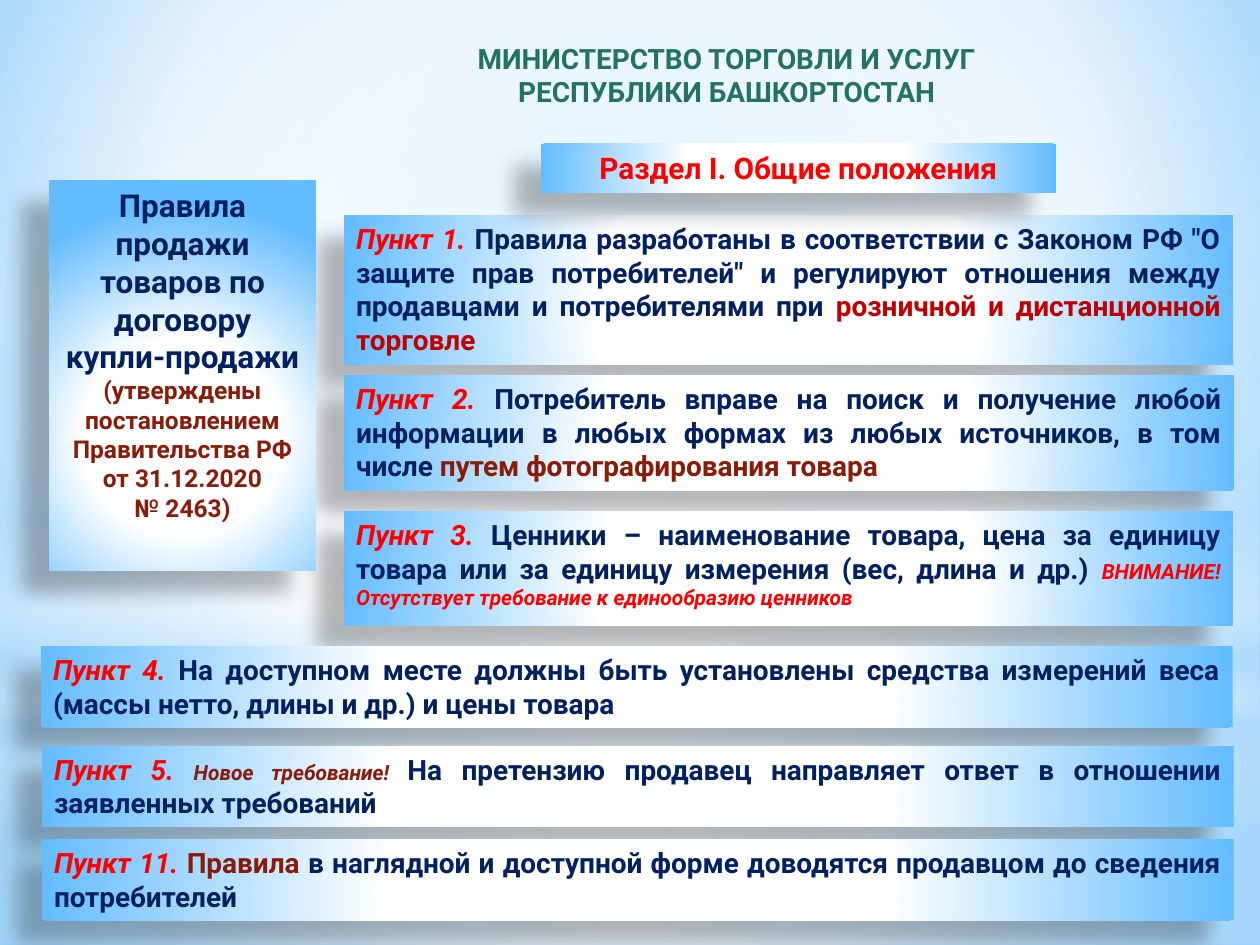
from dataclasses import dataclass
from typing import Optional

from lxml import etree
from pptx import Presentation
from pptx.dml.color import RGBColor
from pptx.enum.shapes import MSO_SHAPE
from pptx.enum.text import MSO_ANCHOR, PP_ALIGN
from pptx.oxml.ns import nsdecls, qn
from pptx.util import Cm, Pt

RECT, OVAL = MSO_SHAPE.RECTANGLE, MSO_SHAPE.OVAL
CENTER, JUSTIFY = PP_ALIGN.CENTER, PP_ALIGN.JUSTIFY
TOP = MSO_ANCHOR.TOP
FONT = "Roboto"
COLORS = {
    "white": "FFFFFF",
    "black": "000000",
    "sky": "9ED5FF",
    "azure": "5BB9FF",
    "panel": "63BCFF",
    "haze": "B4DCFA",
    "red": "FF0000",
    "crimson": "C00000",
    "brown": "891B09",
    "navy": "002060",
    "green": "23735D",
}


@dataclass(frozen=True)
class Gradient:
    stops: tuple[tuple[int, str, int], ...]
    focus: Optional[tuple[int, int, int, int]] = None
    angle: int = 0


@dataclass(frozen=True)
class Box:
    left: float
    top: float
    width: float
    height: float


@dataclass(frozen=True)
class Span:
    text: str
    color: str = "navy"
    italic: bool = False
    size: Optional[int] = None


@dataclass(frozen=True)
class Para:
    spans: tuple[Span, ...]
    size: int = 16
    align: PP_ALIGN = CENTER


CENTRE_FOCUS = (50, 50, 50, 50)
BACKDROP = Gradient(
    ((0, "sky", 100), (60, "white", 100), (100, "azure", 100)), (20, 10, 20, 60)
)
PANEL = Gradient(
    ((0, "white", 100), (42, "white", 100), (100, "panel", 100)), (24, 44, 24, 12)
)
LAYERS = (
    (RECT, Box(0, 14.17, 25.4, 4.88),
     Gradient(((0, "white", 91), (37, "white", 76), (100, "haze", 79)), CENTRE_FOCUS)),
    (RECT, Box(0, 0, 25.4, 14.17),
     Gradient(((0, "white", 89), (48, "white", 62), (100, "haze", 79)), CENTRE_FOCUS)),
    (RECT, Box(0, 10.46, 25.4, 6.35),
     Gradient(((0, "white", 0), (29, "white", 30), (45, "haze", 40),
               (55, "white", 26), (65, "haze", 60), (100, "white", 0)), angle=90)),
    (OVAL, Box(0, 4.45, 25.4, 14.17),
     Gradient(((0, "white", 100), (56, "white", 0)), CENTRE_FOCUS)),
)

MINISTRY = (
    Para((Span("МИНИСТЕРСТВО ТОРГОВЛИ И УСЛУГ", "green"),)),
    Para((Span("РЕСПУБЛИКИ БАШКОРТОСТАН", "green"),)),
)
RULES = (
    Para((Span("Правила продажи товаров по договору купли-продажи"),), 18),
    Para((Span("(утверждены постановлением Правительства РФ от 31.12.2020", "brown"),), 14),
    Para((Span("№ 2463)", "brown"),), 14),
)
SECTION = (Para((Span("Раздел I. Общие положения", "red"),), 17),)
CLAUSES = (
    (1, Box(6.93, 4.34, 17.93, 3), (
        Span("Правила разработаны в соответствии с Законом РФ \"О защите прав "
             "потребителей\" и регулируют отношения между продавцами и "
             "потребителями при "),
        Span("розничной и дистанционной торговле", "crimson"),
    )),
    (2, Box(6.93, 7.57, 17.95, 2.31), (
        Span("Потребитель вправе на поиск и получение любой информации в любых "
             "формах из любых источников, в том числе "),
        Span("путем фотографирования товара", "brown"),
    )),
    (3, Box(6.93, 10.31, 17.93, 2.31), (
        Span("Ценники – наименование товара, цена за единицу товара или за "
             "единицу измерения (вес, длина и др.) "),
        Span("ВНИМАНИЕ! Отсутствует требование к единообразию ценников",
             "red", True, 12),
    )),
    (4, Box(0.82, 13.03, 24.03, 1.63), (
        Span("На доступном месте должны быть установлены средства измерений "
             "веса (массы нетто, длины и др.) и цены товара"),
    )),
    (5, Box(0.84, 15.04, 24.03, 1.63), (
        Span("Новое требование! ", "brown", True, 12),
        Span("На претензию продавец направляет ответ в отношении заявленных требований"),
    )),
    (11, Box(0.84, 16.92, 24.03, 1.63), (
        Span("Правила ", "brown"),
        Span("в наглядной и доступной форме доводятся продавцом до сведения потребителей"),
    )),
)


def paint(fill, element, gradient: Gradient) -> None:
    fill.gradient()
    old = next(element.iter(qn("a:gradFill")))
    stops = "".join(
        f'<a:gs pos="{pos * 1000}"><a:srgbClr val="{COLORS[color]}">'
        f'<a:alpha val="{alpha * 1000}"/></a:srgbClr></a:gs>'
        for pos, color, alpha in gradient.stops
    )
    if gradient.focus:
        sides = " ".join(
            f'{side}="{value * 1000}"' for side, value in zip("ltrb", gradient.focus)
        )
        shade = f'<a:path path="circle"><a:fillToRect {sides}/></a:path>'
    else:
        shade = f'<a:lin ang="{gradient.angle * 60000}" scaled="0"/>'
    new = etree.fromstring(
        f'<a:gradFill {nsdecls("a")} rotWithShape="1">'
        f"<a:gsLst>{stops}</a:gsLst>{shade}</a:gradFill>"
    )
    old.getparent().replace(old, new)


def place(box: Box) -> tuple[Cm, Cm, Cm, Cm]:
    return Cm(box.left), Cm(box.top), Cm(box.width), Cm(box.height)


def add_filled(slide, kind: MSO_SHAPE, box: Box, gradient: Gradient):
    sp = slide.shapes.add_shape(kind, *place(box))
    paint(sp.fill, sp.element, gradient)
    sp.line.fill.background()
    sp.shadow.inherit = False
    return sp


def write(sp, paras: tuple[Para, ...]) -> None:
    tf = sp.text_frame
    tf.word_wrap = True
    tf.vertical_anchor = TOP
    for i, para in enumerate(paras):
        p = tf.add_paragraph() if i else tf.paragraphs[0]
        p.alignment = para.align
        p.font.name = FONT
        p.font.bold = True
        p.font.size = Pt(para.size)
        for span in para.spans:
            r = p.add_run()
            r.text = span.text
            r.font.color.rgb = RGBColor.from_string(COLORS[span.color])
            if span.italic:
                r.font.italic = True
            if span.size:
                r.font.size = Pt(span.size)


def add_panel(slide, box: Box, paras: tuple[Para, ...]) -> None:
    sp = add_filled(slide, RECT, box, PANEL)
    effects = next(sp.element.iter(qn("a:effectLst")))
    shadow = etree.SubElement(
        effects, qn("a:outerShdw"), blurRad=str(Pt(11.8)), dist=str(Pt(19.7)),
        dir=str(141 * 60000), algn="ctr", rotWithShape="0",
    )
    color = etree.SubElement(shadow, qn("a:srgbClr"), val=COLORS["black"])
    etree.SubElement(color, qn("a:alpha"), val="28000")
    write(sp, paras)


def main() -> None:
    prs = Presentation()
    prs.slide_width, prs.slide_height = Cm(25.4), Cm(19.05)
    s = prs.slides.add_slide(prs.slide_layouts[6])
    paint(s.background.fill, s.element, BACKDROP)
    for kind, box, gradient in LAYERS:
        add_filled(s, kind, box, gradient)
    write(s.shapes.add_textbox(*place(Box(4.72, 0.71, 19.86, 1.63))), MINISTRY)
    for number, box, spans in CLAUSES:
        label = Span(f"Пункт {number}. ", "red", True)
        add_panel(s, box, (Para((label, *spans), align=JUSTIFY),))
    add_panel(s, Box(0.99, 3.63, 5.38, 7.87), RULES)
    add_panel(s, Box(10.9, 2.9, 10.39, 0.99), SECTION)
    prs.save("out.pptx")


if __name__ == "__main__":
    main()
